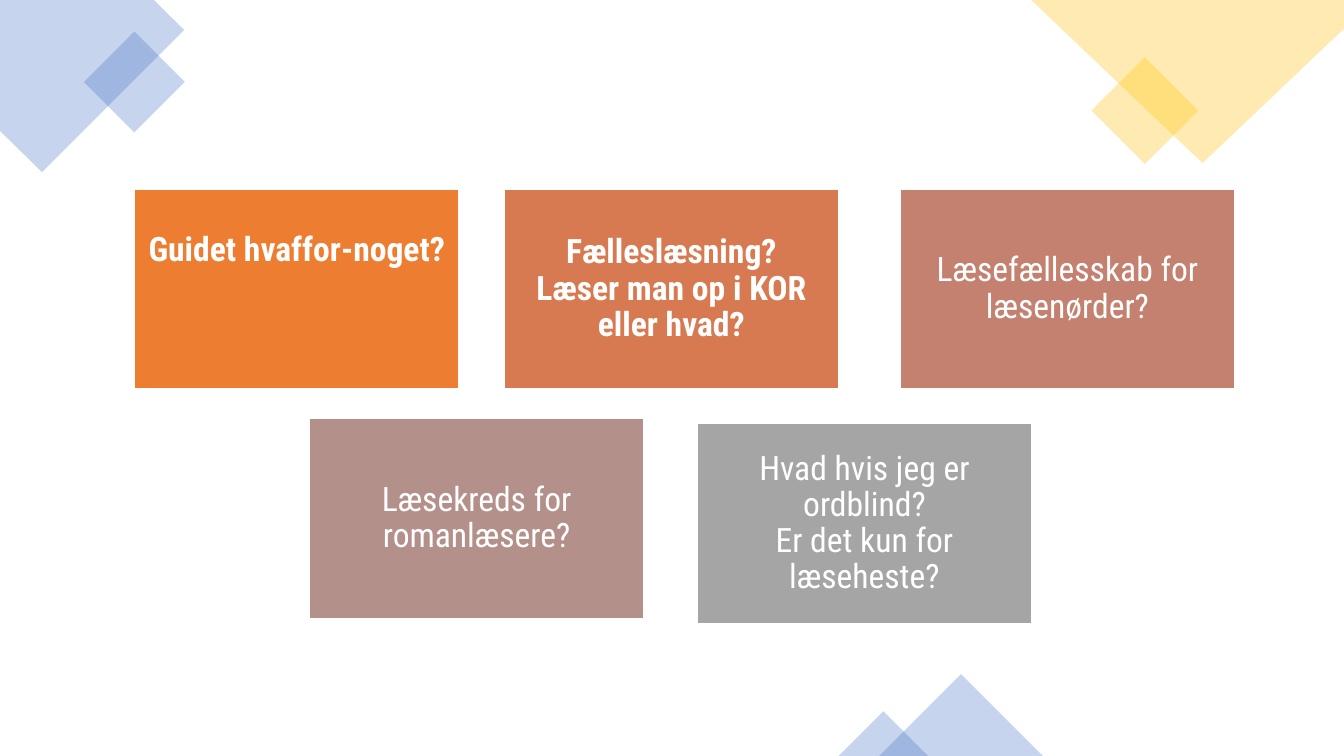
from dataclasses import dataclass
from lxml import etree
from pptx import Presentation
from pptx.dml.color import RGBColor
from pptx.enum.shapes import MSO_SHAPE
from pptx.enum.text import MSO_ANCHOR, PP_ALIGN
from pptx.oxml.ns import qn
from pptx.util import Pt

RECT = MSO_SHAPE.RECTANGLE
PEAK = MSO_SHAPE.ISOSCELES_TRIANGLE
MIDDLE, TOP = MSO_ANCHOR.MIDDLE, MSO_ANCHOR.TOP
CENTER = PP_ALIGN.CENTER


@dataclass(frozen=True)
class Theme:
    """Colours, font and sizes of the slide."""
    blue: str = "4472C4"
    gold: str = "FFC000"
    white: str = "FFFFFF"
    tiles: tuple = ("ED7D31", "D87A51", "C48170", "B4908B", "A5A5A5")
    font: str = "Roboto Condensed"
    size: int = 24
    alpha: int = 30


THEME = Theme()


def tint(shape, color):
    """Give a shape a see-through fill and no line."""
    shape.shadow.inherit = False
    shape.fill.solid()
    shape.fill.fore_color.rgb = RGBColor.from_string(color)
    shape.line.fill.background()
    rgb = shape._element.spPr.find(".//" + qn("a:srgbClr"))
    etree.SubElement(rgb, qn("a:alpha"), val=str(THEME.alpha * 1000))


def outline(slide, left, top, points, color):
    """Draw a closed outline with points relative to left and top."""
    spots = [(Pt(left + x), Pt(top + y)) for x, y in points]
    pen = slide.shapes.build_freeform(*spots[0], scale=1.0)
    pen.add_line_segments(spots[1:], close=True)
    tint(pen.convert_to_shape(), color)


def preset(slide, kind, box, color, turn=0):
    """Draw a tinted preset shape in a box."""
    shape = slide.shapes.add_shape(kind, *map(Pt, box))
    shape.rotation = turn
    tint(shape, color)


def decor(slide, wide, high):
    """Place the corner and bottom shapes on a slide of the given size."""
    corner = [(0, 0), (110, 0), (131.5, 21.5), (30, 123), (0, 93.5)]
    outline(slide, 0, 0, corner, THEME.blue)
    preset(slide, RECT, (70.5, 33, 51, 51), THEME.blue, 315)
    preset(slide, RECT, (wide - 169.25, 52, 54, 54), THEME.gold, 315)
    wedge = [(0, 0), (-223.5, 0), (-101, 116.5), (0, 20.5)]
    outline(slide, wide, 0, wedge, THEME.gold)
    for left, width in ((628, 117), (599, 64)):
        tall = width / 2
        preset(slide, PEAK, (left, high - tall, width, tall), THEME.blue)


def tile(slide, box, color, text, bold, drop):
    """Draw a question tile; a drop sets the text that far from the top."""
    shape = slide.shapes.add_shape(RECT, *map(Pt, box))
    shape.shadow.inherit = False
    shape.fill.solid()
    shape.fill.fore_color.rgb = RGBColor.from_string(color)
    shape.line.color.rgb = RGBColor.from_string(THEME.white)
    shape.line.width = Pt(1)
    frame = shape.text_frame
    frame.word_wrap = True
    frame.vertical_anchor = TOP if drop else MIDDLE
    frame.margin_left = frame.margin_right = frame.margin_bottom = Pt(7.2)
    frame.margin_top = Pt(drop or 7.2)
    para = frame.paragraphs[0]
    para.text = text
    para.alignment = CENTER
    para.line_spacing = 0.9
    para.font.name = THEME.font
    para.font.size = Pt(THEME.size)
    para.font.bold = bold
    para.font.color.rgb = RGBColor.from_string(THEME.white)


def board(slide, left, top):
    """Place the five question tiles relative to left and top."""
    wide, high = 239, 143
    tiles = [
        (0, 0, 232, "Guidet hvaffor-noget?", True, 31),
        (264, 0, wide, "Fælleslæsning?\nLæser man op i KOR\neller hvad?", True, 0),
        (547, 0, wide, "Læsefællesskab for læsenørder?", False, 0),
        (125, 164, wide, "Læsekreds for romanlæsere?", False, 0),
        (402, 167.5, wide,
         "Hvad hvis jeg er ordblind?\nEr det kun for læseheste?", False, 0),
    ]
    for color, (x, y, width, text, bold, drop) in zip(THEME.tiles, tiles):
        tile(slide, (left + x, top + y, width, high), color, text, bold, drop)


def main():
    """Build and save the slide."""
    deck = Presentation()
    deck.slide_width, deck.slide_height = Pt(960), Pt(540)
    slide = deck.slides.add_slide(deck.slide_layouts[6])
    decor(slide, 960, 540)
    board(slide, 96, 135)
    deck.save("out.pptx")


if __name__ == "__main__":
    main()
